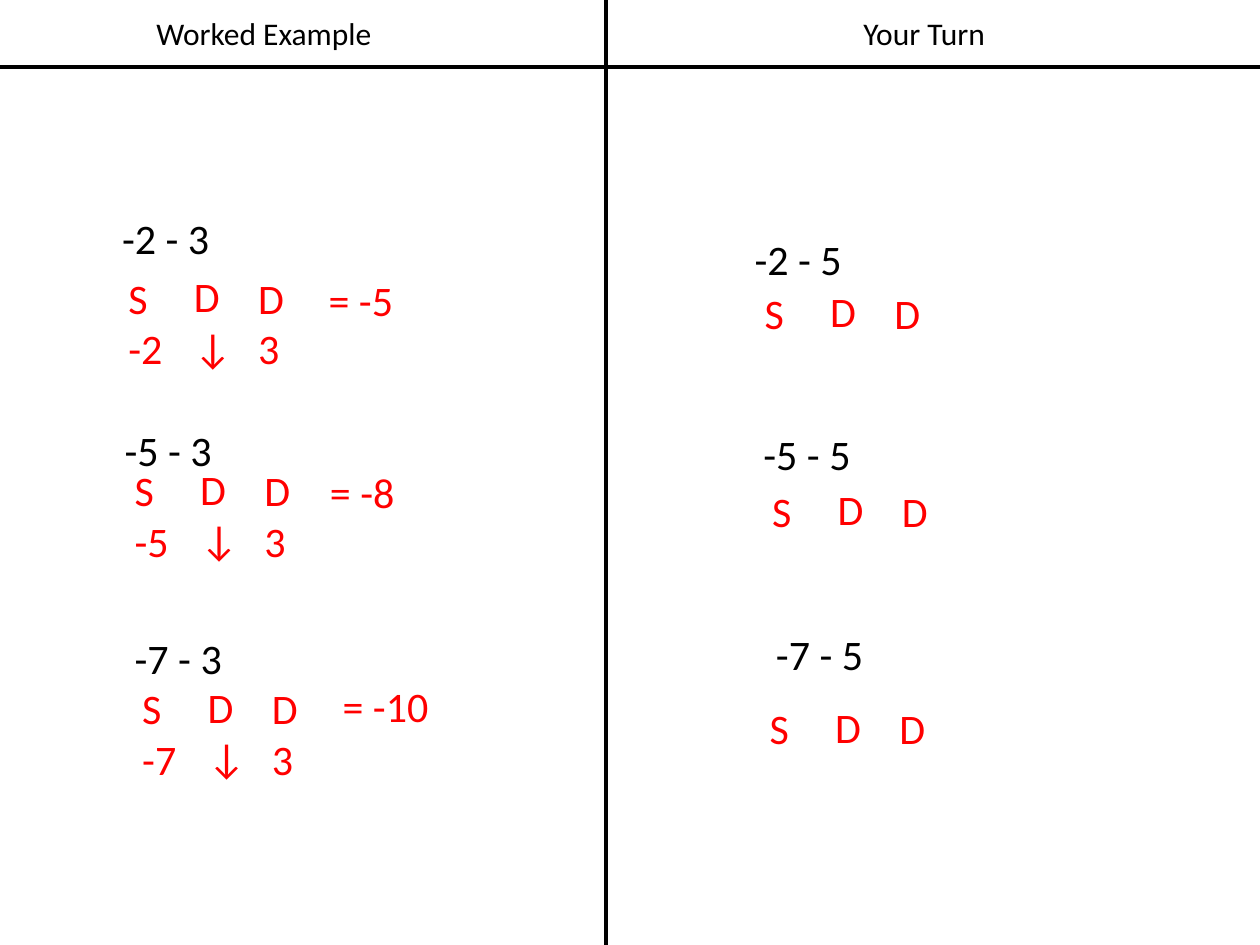
from lxml import etree
from pptx import Presentation
from pptx.dml.color import RGBColor
from pptx.enum.shapes import MSO_CONNECTOR
from pptx.enum.text import MSO_AUTO_SIZE, PP_ALIGN
from pptx.oxml.ns import qn
from pptx.util import Inches, Pt

LINE = MSO_CONNECTOR.STRAIGHT
GROW = MSO_AUTO_SIZE.SHAPE_TO_FIT_TEXT
LEFT, MID = PP_ALIGN.LEFT, PP_ALIGN.CENTER
BLACK, RED = "000000", "FF0000"


def color(code):
    return RGBColor.from_string(code)


def write(home, box, lines, code, size=24, align=LEFT, wrap=True):
    shape = home.add_textbox(*[Inches(n) for n in box])
    frame = shape.text_frame
    frame.word_wrap = wrap
    frame.auto_size = GROW
    for i, line in enumerate(lines):
        para = frame.paragraphs[0] if i == 0 else frame.add_paragraph()
        para.alignment = align
        run = para.add_run()
        run.text = line
        run.font.name = "Calibri"
        run.font.size = Pt(size)
        run.font.color.rgb = color(code)
    return frame


deck = Presentation()
deck.slide_width, deck.slide_height = Inches(10), Inches(7.5)
slide = deck.slides.add_slide(deck.slide_layouts[6])
shapes = slide.shapes

# Sums: text, its box, left and top of the S D D columns, digits below them
sums = [
    ("-2 - 3", (0.87, 1.68, 0.98, 0.46), 0.92, 2.11, ("-2", "↓", "3")),
    ("-5 - 3", (0.89, 3.32, 0.9, 0.5), 0.97, 3.64, ("-5", "↓", "3")),
    ("-7 - 3", (0.97, 4.97, 0.9, 0.5), 1.03, 5.37, ("-7", "↓", "3")),
    ("-2 - 5", (5.89, 1.8, 0.9, 1.31), 5.97, 2.23, ()),
    ("-5 - 5", (5.96, 3.35, 0.9, 0.5), 6.03, 3.8, ()),
    ("-7 - 5", (6.06, 4.94, 0.98, 0.5), 6.01, 5.53, ()),
]
steps = [("S", 0, 0), ("D", 0.52, -0.01), ("D", 1.03, 0)]
for i, (text, box, left, top, digits) in enumerate(sums):
    frame = write(shapes, box, [text], BLACK, wrap=False)
    if i == 0:
        frame.paragraphs[0].line_spacing = 0.9
    group = shapes.add_group_shape()
    for j, (sign, dx, dy) in enumerate(steps):
        place = (left + dx, top + dy, 0.59, 0.91)
        write(group.shapes, place, [sign, *digits[j:j + 1]], RED)

# Answers to the worked example
answers = [("= -5", 2.51, 2.13, 1.03), ("= -8", 2.52, 3.65, 1.23),
           ("= -10", 2.62, 5.35, 1.29)]
for text, left, top, width in answers:
    write(shapes, (left, top, width, 0.91), [text], RED)

# Column heads
for text, left in [("Worked Example", 1.13), ("Your Turn", 6.37)]:
    write(shapes, (left, 0.06, 1.93, 0.4), [text], BLACK, 18, MID)

# Dividing lines
for ends in [(4.81, 0, 4.81, 7.5), (0, 0.53, 10, 0.53)]:
    rule = shapes.add_connector(LINE, *[Inches(n) for n in ends])
    rule.line.color.rgb = color(BLACK)
    rule.line.width = Pt(2.5)
    etree.SubElement(rule._element.spPr, qn("a:effectLst"))

deck.save("out.pptx")
